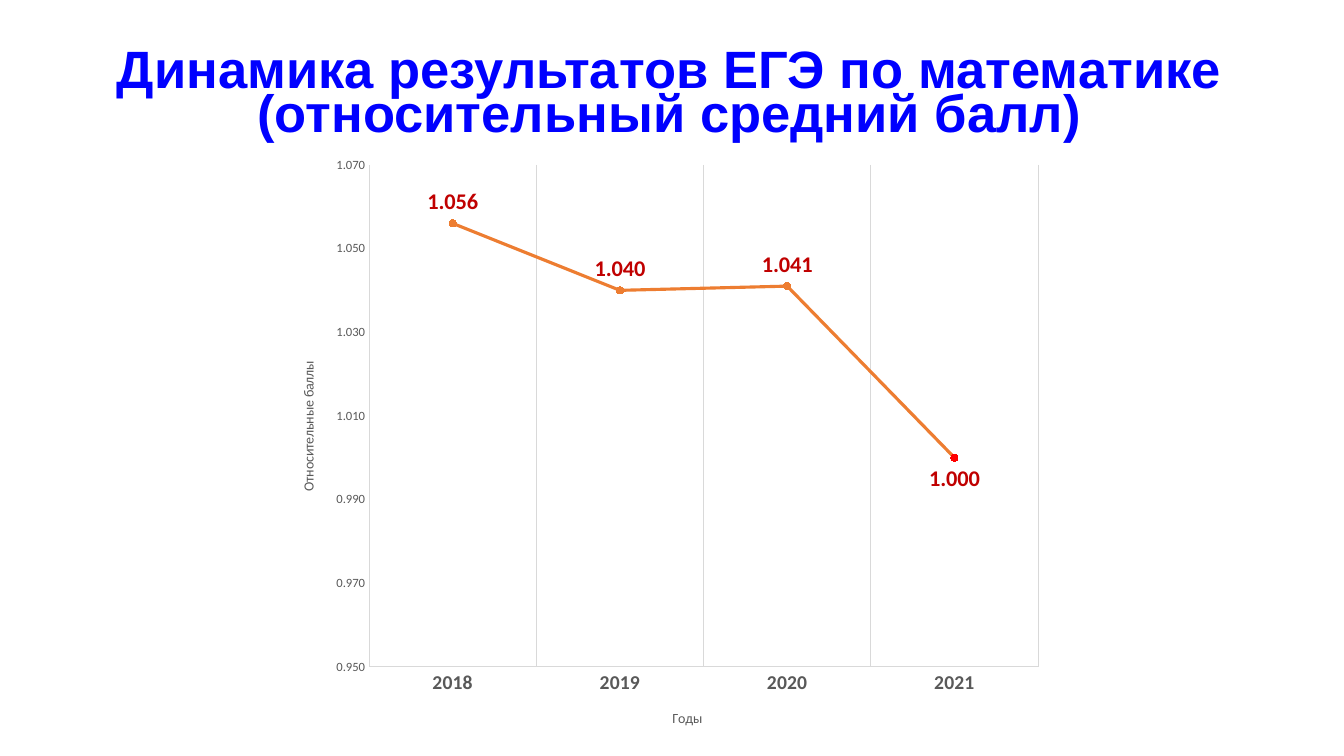
from typing import NamedTuple

from lxml import etree
from pptx import Presentation
from pptx.chart.data import CategoryChartData
from pptx.dml.color import RGBColor
from pptx.enum.chart import (XL_CHART_TYPE, XL_LABEL_POSITION, XL_MARKER_STYLE,
                             XL_TICK_MARK)
from pptx.enum.text import MSO_ANCHOR, PP_ALIGN
from pptx.oxml import parse_xml
from pptx.oxml.ns import nsdecls
from pptx.util import Inches, Pt

LINE_MARKERS = XL_CHART_TYPE.LINE_MARKERS
ABOVE, BELOW = XL_LABEL_POSITION.ABOVE, XL_LABEL_POSITION.BELOW
CIRCLE = XL_MARKER_STYLE.CIRCLE
NO_TICK = XL_TICK_MARK.NONE
BOTTOM, CENTER = MSO_ANCHOR.BOTTOM, PP_ALIGN.CENTER

COLORS = {"title": "0000FF", "axis": "595959", "grid": "D9D9D9",
          "score": "ED7D31", "label": "C00000", "latest": "FF0000"}
TITLE_LINES = ("Динамика результатов ЕГЭ по математике",
               "(относительный средний балл)")
SCORES = {"2018": 1.056, "2019": 1.040, "2020": 1.041, "2021": 1.000}
SCORE_FORMAT = "0.000"
# Inner plot area as fractions of the chart frame
PLOT_AREA = {"x": 0.116, "y": 0.031, "w": 0.864, "h": 0.833}


class TextStyle(NamedTuple):
    size: float
    color: str
    bold: bool = False
    face: str = "Calibri"


class AxisStyle(NamedTuple):
    title: str
    labels: TextStyle


HEADING = TextStyle(37.5, "title", True, "Arial")
AXIS_TITLE = TextStyle(10, "axis")
SCORE_LABEL = TextStyle(16, "label", True)
YEARS = AxisStyle("Годы", TextStyle(14, "axis", True))
POINTS = AxisStyle("Относительные баллы", TextStyle(9, "axis"))


def rgb(name: str) -> RGBColor:
    return RGBColor.from_string(COLORS[name])


def style_font(font, style: TextStyle) -> None:
    font.size = Pt(style.size)
    font.bold = style.bold
    font.name = style.face
    font.color.rgb = rgb(style.color)


def style_line(line, color: str, width: float) -> None:
    line.color.rgb = rgb(color)
    line.width = Pt(width)


def style_axis(axis, style: AxisStyle) -> None:
    axis.major_tick_mark = axis.minor_tick_mark = NO_TICK
    style_font(axis.tick_labels.font, style.labels)
    run = axis.axis_title.text_frame.paragraphs[0].add_run()
    run.text = style.title
    style_font(run.font, AXIS_TITLE)


def fix_plot_area(chart) -> None:
    """Pin the inner plot area to PLOT_AREA."""
    plot_area = chart.element.find(".//{*}plotArea")
    for old in plot_area.findall("{*}layout"):
        plot_area.remove(old)
    layout = parse_xml(
        f'<c:layout {nsdecls("c")}><c:manualLayout><c:layoutTarget val="inner"/>'
        '<c:xMode val="edge"/><c:yMode val="edge"/></c:manualLayout></c:layout>')
    for side, share in PLOT_AREA.items():
        etree.SubElement(layout[0], layout.tag.replace("layout", side), val=str(share))
    plot_area.insert(0, layout)


def add_heading(slide) -> None:
    box = slide.shapes.add_textbox(Inches(0.89), Inches(0), Inches(11.5), Inches(1.45))
    frame = box.text_frame
    frame.word_wrap = True
    frame.vertical_anchor = BOTTOM
    paragraph = frame.paragraphs[0]
    paragraph.alignment = CENTER
    paragraph.line_spacing = 0.7
    for index, line in enumerate(TITLE_LINES):
        if index:
            paragraph.add_line_break()
        run = paragraph.add_run()
        run.text = line
        style_font(run.font, HEADING)


def style_scores(series) -> None:
    series.smooth = False
    style_line(series.format.line, "score", 2.25)
    series.marker.style = CIRCLE
    series.marker.size = 5
    series.marker.format.fill.solid()
    series.marker.format.fill.fore_color.rgb = rgb("score")
    series.marker.format.line.color.rgb = rgb("score")

    labels = series.data_labels
    labels.show_value = True
    labels.position = ABOVE
    labels.number_format = SCORE_FORMAT
    labels.number_format_is_linked = False
    style_font(labels.font, SCORE_LABEL)

    latest = series.points[len(SCORES) - 1]
    style_line(latest.format.line, "latest", 2.25)
    latest.marker.style = CIRCLE
    latest.marker.size = 5
    latest.marker.format.fill.solid()
    latest.marker.format.fill.fore_color.rgb = rgb("latest")
    latest.marker.format.line.color.rgb = rgb("latest")
    style_font(latest.data_label.font, SCORE_LABEL)
    latest.data_label.position = BELOW


def add_score_chart(slide) -> None:
    data = CategoryChartData(number_format=SCORE_FORMAT)
    data.categories = list(SCORES)
    data.add_series("Series 1", list(SCORES.values()))
    chart = slide.shapes.add_chart(LINE_MARKERS, Inches(2.77), Inches(1.45),
                                   Inches(7.68), Inches(5.98), data).chart
    chart.has_legend = chart.has_title = False
    chart.font.name = "Calibri"
    chart.font.size = Pt(10)
    chart.plots[0].vary_by_categories = False
    fix_plot_area(chart)

    years, points = chart.category_axis, chart.value_axis
    style_axis(years, YEARS)
    years.has_major_gridlines = True
    style_line(years.major_gridlines.format.line, "grid", 0.75)
    style_line(years.format.line, "grid", 0.75)

    style_axis(points, POINTS)
    points.has_major_gridlines = False
    points.format.line.fill.background()
    points.minimum_scale, points.maximum_scale = 0.95, 1.07
    points.major_unit = 0.02
    points.tick_labels.number_format = SCORE_FORMAT
    points.tick_labels.number_format_is_linked = False

    style_scores(chart.plots[0].series[0])


def main() -> None:
    deck = Presentation()
    deck.slide_width, deck.slide_height = Inches(13.33), Inches(7.5)
    slide = deck.slides.add_slide(deck.slide_layouts[6])
    add_score_chart(slide)
    add_heading(slide)
    deck.save("out.pptx")


if __name__ == "__main__":
    main()
